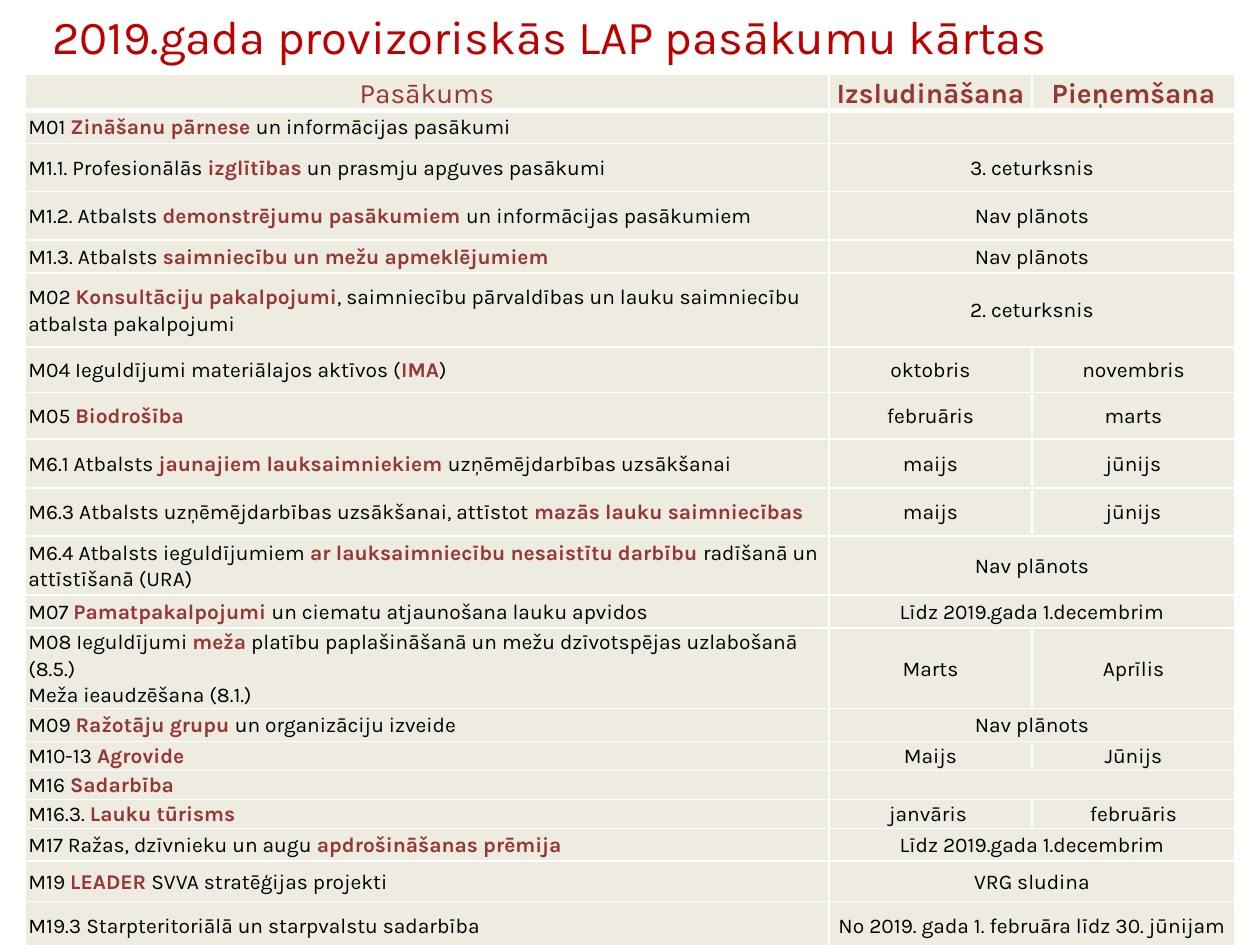
from typing import NamedTuple

from lxml import etree
from pptx import Presentation
from pptx.dml.color import RGBColor
from pptx.enum.text import MSO_ANCHOR, PP_ALIGN
from pptx.oxml.ns import qn
from pptx.util import Pt

MIDDLE = MSO_ANCHOR.MIDDLE
LEFT, CENTER = PP_ALIGN.LEFT, PP_ALIGN.CENTER
FONT = "Karla"
RED, MAROON, BLACK = "C00000", "953735", "000000"
CREAM, WHITE = "EEECE1", "FFFFFF"
COLUMN_WIDTHS = (459.5, 116, 116)
HEADER_HEIGHT = 20
MARK = "*"  # encloses the emphasised words


class Measure(NamedTuple):
    height: float
    name: str
    opening: str = ""
    closing: str | None = None  # None: the opening cell spans both columns


MEASURES = (
    Measure(18.7, "M01 *Zināšanu pārnese *un informācijas pasākumi"),
    Measure(27.4, "M1.1. Profesionālās *izglītības* un prasmju apguves pasākumi", "3. ceturksnis"),
    Measure(28, "M1.2. Atbalsts *demonstrējumu pasākumiem *un informācijas pasākumiem", "Nav plānots"),
    Measure(18.7, "M1.3. Atbalsts *saimniecību un mežu apmeklējumiem*", "Nav plānots"),
    Measure(42.4, "M02 *Konsultāciju pakalpojumi*, saimniecību pārvaldības un lauku "
                  "saimniecību atbalsta pakalpojumi", "2. ceturksnis"),
    Measure(26, "M04 Ieguldījumi materiālajos aktīvos (*IMA*)", "oktobris", "novembris"),
    Measure(26.6, "M05 *Biodrošība*", "februāris", "marts"),
    Measure(28, "M6.1 Atbalsts *jaunajiem lauksaimniekiem *uzņēmējdarbības uzsākšanai", "maijs", "jūnijs"),
    Measure(27.4, "M6.3 Atbalsts uzņēmējdarbības uzsākšanai, attīstot *mazās lauku saimniecības*",
            "maijs", "jūnijs"),
    Measure(33.8, "M6.4 Atbalsts ieguldījumiem *ar lauksaimniecību nesaistītu darbību *"
                  "radīšanā un attīstīšanā (URA)", "Nav plānots"),
    Measure(18.7, "M07 *Pamatpakalpojumi *un ciematu atjaunošana lauku apvidos",
            "Līdz 2019.gada 1.decembrim"),
    Measure(33.8, "M08 Ieguldījumi *meža* platību paplašināšanā un mežu dzīvotspējas uzlabošanā (8.5.)\n"
                  "Meža ieaudzēšana (8.1.)", "Marts", "Aprīlis"),
    Measure(18.7, "M09 *Ražotāju grupu *un organizāciju izveide", "Nav plānots"),
    Measure(16.6, "M10-13 *Agrovide*", "Maijs", "Jūnijs"),
    Measure(16.6, "M16 *Sadarbība*"),
    Measure(16.6, "M16.3. *Lauku tūrisms*", "janvāris ", "februāris"),
    Measure(18.7, "M17 Ražas, dzīvnieku un augu *apdrošināšanas prēmija*", "Līdz 2019.gada 1.decembrim"),
    Measure(23, "M19 *LEADER* SVVA stratēģijas projekti", "VRG sludina"),
    Measure(28, "M19.3 Starpteritoriālā un starpvalstu sadarbība",
            "No 2019. gada 1. februāra līdz 30. jūnijam"),
)


def color(value: str) -> RGBColor:
    return RGBColor.from_string(value)


def set_font(font, size: float, value: str, bold: bool = False) -> None:
    font.name, font.size, font.bold = FONT, Pt(size), bold
    font.color.rgb = color(value)


def set_borders(cell, bottom: float) -> None:
    """Put white lines on all four sides, ahead of the fill."""
    properties = cell._tc.get_or_add_tcPr()
    for index, (side, width) in enumerate((("lnL", 1), ("lnR", 1), ("lnT", 1), ("lnB", bottom))):
        line = etree.Element(qn(f"a:{side}"), w=str(Pt(width)))
        fill = etree.SubElement(line, qn("a:solidFill"))
        etree.SubElement(fill, qn("a:srgbClr"), val=WHITE)
        properties.insert(index, line)


def fill_cell(cell, text: str, align, size: float = 12, value: str = BLACK,
              bold: bool = False, bottom: float = 1) -> None:
    cell.vertical_anchor = MIDDLE
    cell.margin_left = cell.margin_right = Pt(2)
    cell.margin_top = cell.margin_bottom = Pt(0)
    cell.fill.solid()
    cell.fill.fore_color.rgb = color(CREAM)
    set_borders(cell, bottom)
    for index, line in enumerate(text.split("\n")):
        frame = cell.text_frame
        para = frame.add_paragraph() if index else frame.paragraphs[0]
        para.alignment, para.line_spacing = align, 1.07
        set_font(para.font, size, value, bold)
        for position, part in enumerate(line.split(MARK)):
            if part:
                span = para.add_run()
                span.text = part
                if position % 2:
                    set_font(span.font, size, MAROON, True)


def add_title(page, text: str) -> None:
    box = page.shapes.add_textbox(Pt(25), Pt(1.5), Pt(644), Pt(38))
    frame = box.text_frame
    frame.word_wrap, frame.vertical_anchor = True, MIDDLE
    frame.margin_left = frame.margin_right = Pt(5)
    frame.margin_top = frame.margin_bottom = Pt(2.7)
    para = frame.paragraphs[0]
    para.text = text
    set_font(para.font, 27, RED)


def add_schedule(page) -> None:
    heights = [HEADER_HEIGHT, *(measure.height for measure in MEASURES)]
    table = page.shapes.add_table(len(heights), len(COLUMN_WIDTHS), Pt(14.2), Pt(42.7),
                                  Pt(sum(COLUMN_WIDTHS)), Pt(sum(heights))).table
    table.first_row = table.horz_banding = False
    for column, width in zip(table.columns, COLUMN_WIDTHS):
        column.width = Pt(width)
    for row, height in zip(table.rows, heights):
        row.height = Pt(height)

    # Header row
    for index, heading in enumerate(("Pasākums", "Izsludināšana", "Pieņemšana")):
        fill_cell(table.cell(0, index), heading, CENTER, 16, MAROON, bold=index > 0, bottom=3)

    # One row per measure
    for index, measure in enumerate(MEASURES, start=1):
        fill_cell(table.cell(index, 0), measure.name, LEFT)
        fill_cell(table.cell(index, 1), measure.opening, CENTER)
        fill_cell(table.cell(index, 2), measure.closing or "", CENTER)
        if measure.closing is None:
            table.cell(index, 1).merge(table.cell(index, 2))


def main() -> None:
    deck = Presentation()
    deck.slide_width, deck.slide_height = Pt(720), Pt(540)
    page = deck.slides.add_slide(deck.slide_layouts[6])
    add_title(page, "2019.gada provizoriskās LAP pasākumu kārtas")
    add_schedule(page)
    deck.save("out.pptx")


if __name__ == "__main__":
    main()
